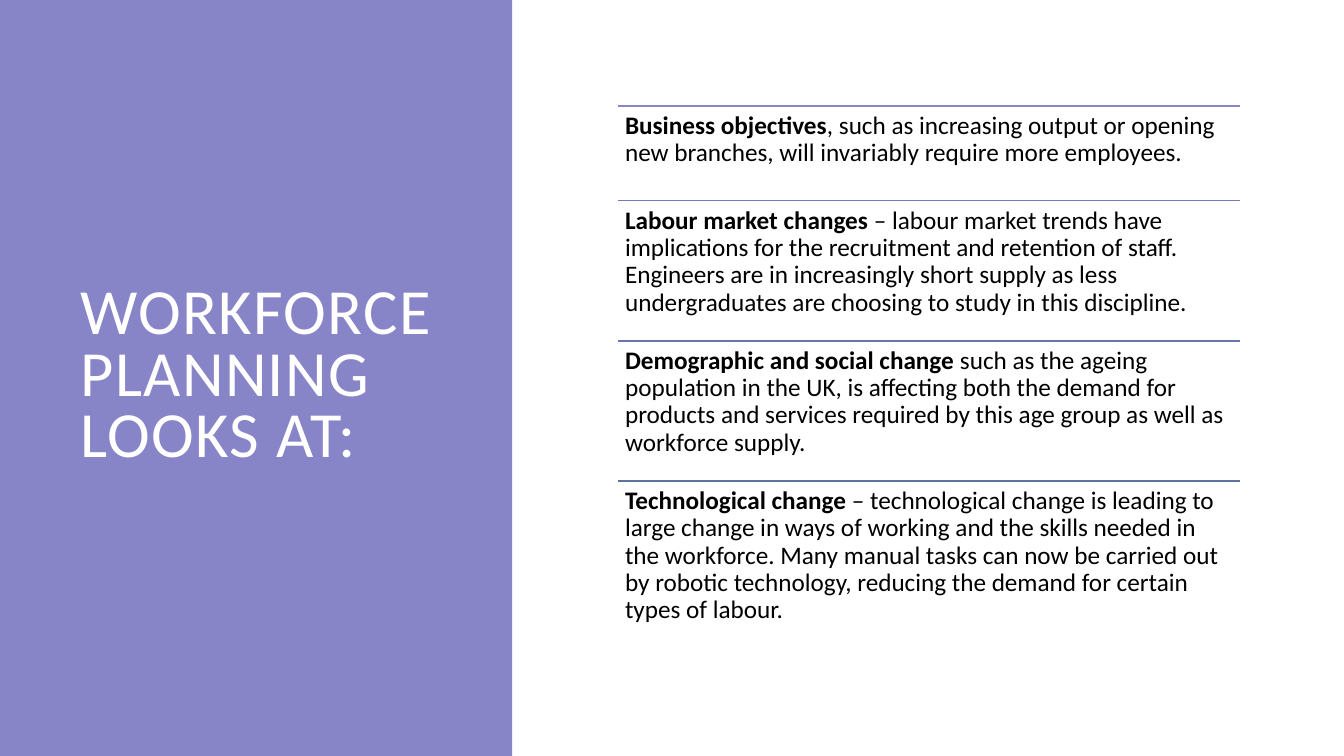
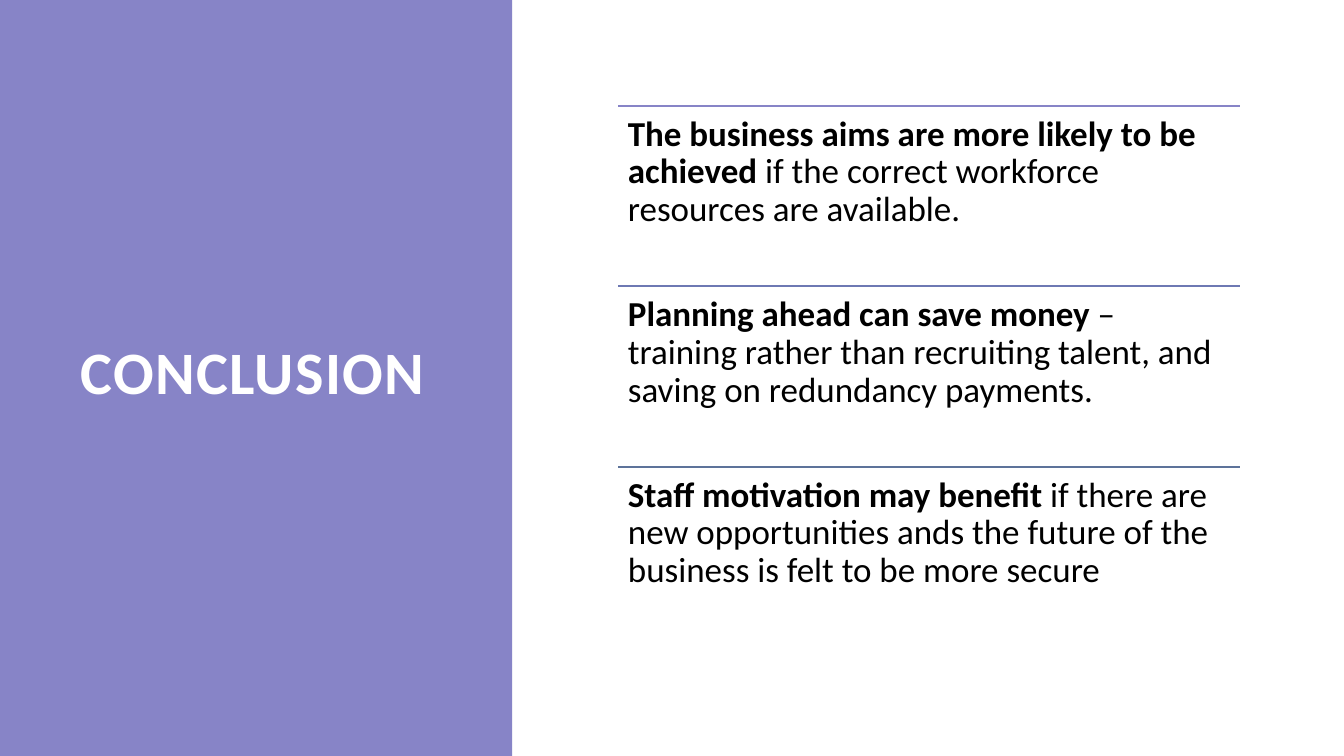
from dataclasses import dataclass

from lxml import etree
from pptx import Presentation
from pptx.dml.color import RGBColor
from pptx.enum.shapes import MSO_CONNECTOR, MSO_SHAPE
from pptx.enum.text import MSO_ANCHOR, MSO_AUTO_SIZE, PP_ALIGN
from pptx.oxml.ns import qn
from pptx.util import Pt

STRAIGHT = MSO_CONNECTOR.STRAIGHT
RECTANGLE = MSO_SHAPE.RECTANGLE
TOP, MIDDLE = MSO_ANCHOR.TOP, MSO_ANCHOR.MIDDLE
LEFT = PP_ALIGN.LEFT
NO_FIT = MSO_AUTO_SIZE.NONE
TITLE_ONLY = 5

EMU_PER_PX = 9144
SLIDE_WIDTH, SLIDE_HEIGHT = 1333, 750
PANEL_WIDTH = 508
TITLE_BOX = (70, 70, 374, 609)
LIST_LEFT, LIST_TOP, LIST_WIDTH = 613, 105, 617


@dataclass(frozen=True)
class Theme:
    font: str = "Calibri"
    panel: str = "8784C7"
    title: str = "FFFFFF"
    body: str = "000000"
    four_rules: tuple = ("8784C7", "757BBA", "6777AC", "5D739A")
    three_rules: tuple = ("8784C7", "6E79B3", "5D739A")
    long_title_size: int = 46
    short_title_size: int = 43
    small_body_size: int = 18
    large_body_size: int = 25
    rule_width: float = 1.25


THEME = Theme()

FACTORS = [
    ("Business objectives", ", such as increasing output or opening new branches, "
     "will invariably require more employees.", 94),
    ("Labour market changes ", "– labour market trends have implications for the "
     "recruitment and retention of staff. Engineers are in increasingly short supply "
     "as less undergraduates are choosing to study in this discipline.", 139),
    ("Demographic and social change ", "such as the ageing population in the UK, is "
     "affecting both the demand for products and services required by this age group "
     "as well as workforce supply.", 139),
    ("Technological change ", "– technological change is leading to large change in "
     "ways of working and the skills needed in the workforce. Many manual tasks can "
     "now be carried out by robotic technology, reducing the demand for certain types "
     "of labour.", 165),
]

BENEFITS = [
    ("The business aims are more likely to be achieved ",
     "if the correct workforce resources are available.", 179),
    ("Planning ahead can save money ",
     "– training rather than recruiting talent, and saving on redundancy payments.", 179),
    ("Staff motivation may benefit ", "if there are new opportunities ands the future "
     "of the business is felt to be more secure", 179),
]


def px(*lengths):
    return [length * EMU_PER_PX for length in lengths]


def write(frame, runs, size, color, inset, line_spacing, anchor=TOP, tracking=None):
    frame.word_wrap = True
    frame.auto_size = NO_FIT
    frame.vertical_anchor = anchor
    inset, = px(inset)
    frame.margin_left = frame.margin_right = inset
    frame.margin_top = frame.margin_bottom = inset
    paragraph = frame.paragraphs[0]
    paragraph.alignment = LEFT
    paragraph.line_spacing = line_spacing
    for text, bold in runs:
        run = paragraph.add_run()
        run.text = text
        run.font.name = THEME.font
        run.font.size = Pt(size)
        run.font.bold = bold
        run.font.color.rgb = RGBColor.from_string(color)
        if tracking:
            run.font._element.set("spc", str(tracking * 100))


def add_titled_slide(deck, heading, size, bold=False):
    slide = deck.slides.add_slide(deck.slide_layouts[TITLE_ONLY])
    panel = slide.shapes.add_shape(RECTANGLE, *px(0, 0, PANEL_WIDTH, SLIDE_HEIGHT))
    panel.shadow.inherit = False
    panel.fill.solid()
    panel.fill.fore_color.rgb = RGBColor.from_string(THEME.panel)
    panel.line.fill.background()
    title = slide.shapes.title
    title._element.addprevious(panel._element)
    title.left, title.top, title.width, title.height = px(*TITLE_BOX)
    write(title.text_frame, [(heading, bold)], size=size, color=THEME.title,
          inset=10, line_spacing=0.8, anchor=MIDDLE, tracking=1)
    return slide


def add_rule(slide, top, color):
    rule = slide.shapes.add_connector(
        STRAIGHT, *px(LIST_LEFT, top, LIST_LEFT + LIST_WIDTH, top))
    rule.line.color.rgb = RGBColor.from_string(color)
    rule.line.width = Pt(THEME.rule_width)
    etree.SubElement(rule._element.spPr, qn("a:effectLst"))


def add_ruled_list(slide, entries, rule_colors, size, inset):
    top = LIST_TOP
    for (lead, detail, height), color in zip(entries, rule_colors):
        add_rule(slide, top, color)
        entry = slide.shapes.add_textbox(*px(LIST_LEFT, top, LIST_WIDTH, height))
        write(entry.text_frame, [(lead, True), (detail, False)], size=size,
              color=THEME.body, inset=inset, line_spacing=0.9)
        top += height


def main():
    deck = Presentation()
    deck.slide_width, deck.slide_height = px(SLIDE_WIDTH, SLIDE_HEIGHT)

    factors = add_titled_slide(deck, "WORKFORCE PLANNING LOOKS AT:", THEME.long_title_size)
    add_ruled_list(factors, FACTORS, THEME.four_rules, THEME.small_body_size, inset=7)

    conclusion = add_titled_slide(deck, "CONCLUSION", THEME.short_title_size, bold=True)
    add_ruled_list(conclusion, BENEFITS, THEME.three_rules, THEME.large_body_size, inset=10)

    deck.save("out.pptx")


if __name__ == "__main__":
    main()
